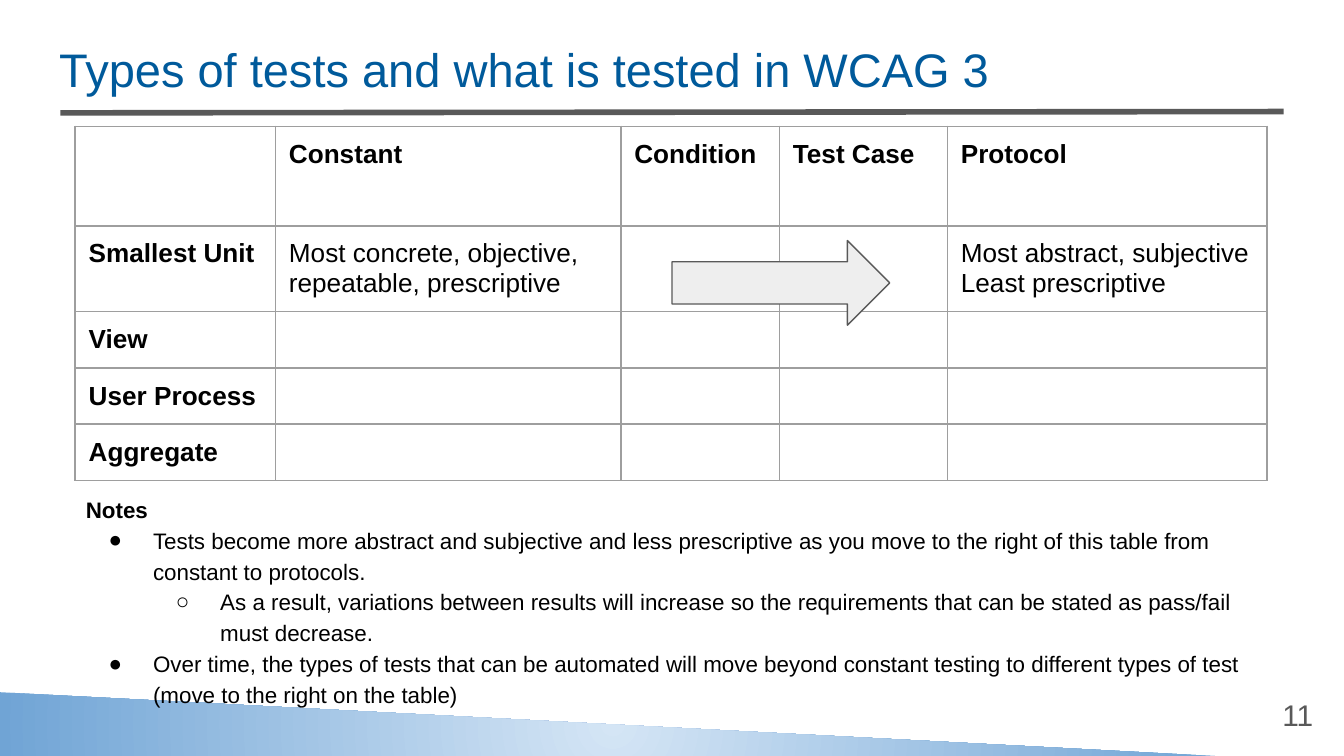
from dataclasses import dataclass

from lxml import etree
from pptx import Presentation
from pptx import util as u
from pptx.dml.color import RGBColor
from pptx.enum import shapes, text
from pptx.oxml.ns import qn

COLORS = {
    "title": "005A9B",
    "text": "000000",
    "gray": "595959",
    "border": "9E9E9E",
    "arrow": "EEEEEE",
    "wedge_light": "D4E5F5",
    "wedge_dark": "70A4D5",
}
FONT = "Arial"


@dataclass
class Note:
    words: str
    bullet: str = ""
    level: int = 0


COLUMN_WIDTHS = [1.49, 2.57, 1.18, 1.25, 2.38]
ROW_HEIGHTS = [0.74, 0.63, 0.42, 0.42, 0.42]
TEST_TYPES = [
    ["", "Constant", "Condition", "Test Case", "Protocol"],
    ["Smallest Unit", "Most concrete, objective, repeatable, prescriptive", "", "",
     "Most abstract, subjective\nLeast prescriptive"],
    ["View", "", "", "", ""],
    ["User Process", "", "", "", ""],
    ["Aggregate", "", "", "", ""],
]
NOTES = [
    Note("Notes"),
    Note("Tests become more abstract and subjective and less prescriptive as you move "
         "to the right of this table from constant to protocols.", "●"),
    Note("As a result, variations between results will increase so the requirements "
         "that can be stated as pass/fail must decrease.", "○", 1),
    Note("Over time, the types of tests that can be automated will move beyond constant "
         "testing to different types of test (move to the right on the table)", "●"),
]


def rgb(name: str) -> RGBColor:
    return RGBColor.from_string(COLORS[name])


def box(left: float, top: float, width: float, height: float) -> list:
    return [u.Inches(n) for n in (left, top, width, height)]


def style(words, size: float, color: str = "text", bold: bool = False) -> None:
    """Set the font of a paragraph or a run."""
    font = words.font
    font.name, font.size, font.bold = FONT, u.Pt(size), bold
    font.color.rgb = rgb(color)


def set_margins(target, sides: float = 0.1, ends: float = 0.1) -> None:
    target.margin_left = target.margin_right = u.Inches(sides)
    target.margin_top = target.margin_bottom = u.Inches(ends)


def add_borders(cell) -> None:
    properties = cell._tc.get_or_add_tcPr()
    for position, side in enumerate(("lnL", "lnR", "lnT", "lnB")):
        line = etree.Element(qn(f"a:{side}"), w=str(u.Pt(1)))
        fill = etree.SubElement(line, qn("a:solidFill"))
        etree.SubElement(fill, qn("a:srgbClr"), val=COLORS["border"])
        properties.insert(position, line)


def add_bullet(paragraph, note: Note) -> None:
    properties = paragraph._p.get_or_add_pPr()
    properties.set("marL", str(u.Inches(0.5 * (note.level + 1))))
    properties.set("indent", str(u.Inches(-0.33)))
    color = etree.SubElement(properties, qn("a:buClr"))
    etree.SubElement(color, qn("a:srgbClr"), val=COLORS["text"])
    etree.SubElement(properties, qn("a:buSzPts"), val="1200")
    etree.SubElement(properties, qn("a:buFont"), typeface=FONT)
    etree.SubElement(properties, qn("a:buChar"), char=note.bullet)


def add_wedge(slide) -> None:
    wedge = slide.shapes.add_shape(
        shapes.MSO_SHAPE.RIGHT_TRIANGLE, *box(-0.01, 5.15, 9.14, 0.48))
    wedge.shadow.inherit = False
    wedge.line.fill.background()
    wedge.fill.gradient()
    for stop, color in zip(wedge.fill.gradient_stops, ("wedge_light", "wedge_dark")):
        stop.color.rgb = rgb(color)
    # Radial gradient from the centre instead of the default linear one
    gradient = wedge._element.spPr.find(qn("a:gradFill"))
    gradient.remove(gradient.find(qn("a:lin")))
    circle = etree.SubElement(gradient, qn("a:path"), path="circle")
    etree.SubElement(circle, qn("a:fillToRect"),
                     {side: "50000" for side in ("l", "t", "r", "b")})


def add_rule(slide) -> None:
    rule = slide.shapes.add_connector(
        shapes.MSO_CONNECTOR.STRAIGHT, *box(0.45, 0.84, 9.55, 0.83))
    rule.line.color.rgb = rgb("gray")
    rule.line.width = u.Pt(3)
    etree.SubElement(rule._element.spPr, qn("a:effectLst"))


def set_title(slide, words: str) -> None:
    title = slide.shapes.title
    title.left, title.top, title.width, title.height = box(0.34, 0.2, 9.32, 0.63)
    frame = title.text_frame
    frame.text = words
    frame.auto_size = text.MSO_AUTO_SIZE.NONE
    frame.vertical_anchor = text.MSO_ANCHOR.MIDDLE
    set_margins(frame)
    frame.paragraphs[0].alignment = text.PP_ALIGN.LEFT
    style(frame.paragraphs[0], 25.2, "title")


def add_test_table(slide) -> None:
    table = slide.shapes.add_table(
        len(ROW_HEIGHTS), len(COLUMN_WIDTHS),
        *box(0.56, 0.94, sum(COLUMN_WIDTHS), sum(ROW_HEIGHTS))).table
    table.first_row = table.horz_banding = False
    for column, width in zip(table.columns, COLUMN_WIDTHS):
        column.width = u.Inches(width)
    for r, (row, height) in enumerate(zip(table.rows, ROW_HEIGHTS)):
        row.height = u.Inches(height)
        for c, cell in enumerate(row.cells):
            cell.text = TEST_TYPES[r][c]
            cell.fill.background()
            # Empty cells need no vertical margin, so rows keep their height
            set_margins(cell, ends=0.1 if cell.text else 0)
            add_borders(cell)
            for paragraph in cell.text_frame.paragraphs:
                style(paragraph, 14, bold=r == 0 or c == 0)


def add_arrow(slide) -> None:
    arrow = slide.shapes.add_shape(
        shapes.MSO_SHAPE.RIGHT_ARROW, *box(5, 1.79, 1.62, 0.63))
    arrow.shadow.inherit = False
    arrow.fill.solid()
    arrow.fill.fore_color.rgb = rgb("arrow")
    arrow.line.color.rgb = rgb("gray")
    arrow.line.width = u.Pt(0.75)


def add_notes(slide) -> None:
    frame = slide.shapes.add_textbox(*box(0.54, 3.56, 8.92, 1.8)).text_frame
    frame.word_wrap = True
    set_margins(frame)
    frame.text = "\n".join(note.words for note in NOTES)
    for paragraph, note in zip(frame.paragraphs, NOTES):
        paragraph.level = note.level
        paragraph.line_spacing = 1.15
        # Bullets take their size from the run
        style(paragraph.runs[0], 12, bold=not note.bullet)
        if note.bullet:
            add_bullet(paragraph, note)


def add_page_number(slide, number: str) -> None:
    frame = slide.shapes.add_textbox(*box(9.27, 5.1, 0.6, 0.43)).text_frame
    frame.word_wrap = True
    frame.vertical_anchor = text.MSO_ANCHOR.MIDDLE
    set_margins(frame)
    frame.text = number
    frame.paragraphs[0].alignment = text.PP_ALIGN.RIGHT
    style(frame.paragraphs[0], 16, "gray")


def main() -> None:
    deck = Presentation()
    # Widescreen, 16 by 9
    deck.slide_width = u.Inches(10)
    deck.slide_height = deck.slide_width * 9 // 16
    slide = deck.slides.add_slide(deck.slide_layouts[5])

    # Backdrop and heading
    add_wedge(slide)
    add_rule(slide)
    set_title(slide, "Types of tests and what is tested in WCAG 3")

    # Table with the arrow across its middle columns
    add_test_table(slide)
    add_arrow(slide)

    # Notes and page number
    add_notes(slide)
    add_page_number(slide, "11")
    deck.save("out.pptx")


if __name__ == "__main__":
    main()
